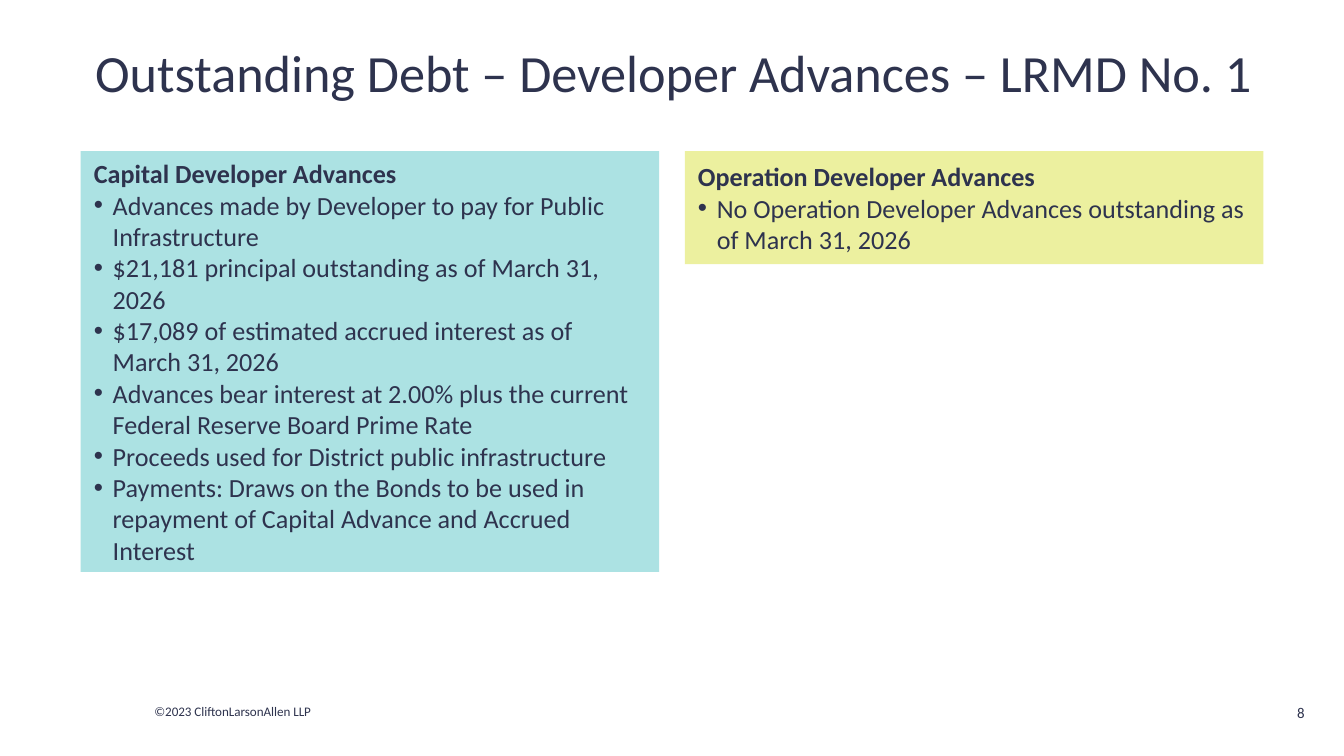
from dataclasses import dataclass
from lxml.etree import SubElement
from pptx import Presentation
from pptx.dml.color import RGBColor
from pptx.enum.shapes import MSO_SHAPE
from pptx.enum.text import MSO_ANCHOR, PP_ALIGN
from pptx.oxml.ns import qn
from pptx.util import Emu, Pt

PX = 4572  # EMU per px, 200 px to the inch


@dataclass(frozen=True)
class Theme:
    font: str = "Calibri"
    ink: str = "2E334E"
    teal: str = "7DD2D3"
    lime: str = "E2E868"
    panel_alpha: int = 63
    title_size: int = 28
    body_size: int = 14
    number_size: int = 8
    footer_size: int = 7


THEME = Theme()


def px(length):
    return Emu(length * PX)


def style(para, size, bold=False, align=PP_ALIGN.LEFT):
    para.alignment = align
    for span in para.runs:
        span.font.name = THEME.font
        span.font.size = Pt(size)
        span.font.bold = bold
        span.font.color.rgb = RGBColor.from_string(THEME.ink)


def add_bullet(para, indent=28):
    properties = para._p.get_or_add_pPr()
    properties.set("marL", str(px(indent)))
    properties.set("indent", str(px(-indent)))
    SubElement(properties, qn("a:buFont")).set("typeface", "Arial")
    SubElement(properties, qn("a:buChar")).set("char", "•")


def add_label(page, box, text, size, align=PP_ALIGN.LEFT):
    frame = page.shapes.add_textbox(*map(px, box)).text_frame
    frame.word_wrap = True
    frame.vertical_anchor = MSO_ANCHOR.MIDDLE
    frame.text = text
    style(frame.paragraphs[0], size, align=align)


def add_panel(page, box, color, heading, points):
    # Translucent background
    panel = page.shapes.add_shape(MSO_SHAPE.RECTANGLE, *map(px, box))
    panel.shadow.inherit = False
    panel.line.fill.background()
    panel.fill.solid()
    panel.fill.fore_color.rgb = RGBColor.from_string(color)
    tint = panel.fill._xPr.find(qn("a:solidFill"))[0]
    SubElement(tint, qn("a:alpha")).set("val", str(THEME.panel_alpha * 1000))

    # Heading and bulleted points
    frame = panel.text_frame
    frame.word_wrap = True
    frame.vertical_anchor = MSO_ANCHOR.MIDDLE
    frame.text = heading
    style(frame.paragraphs[0], THEME.body_size, bold=True)
    for point in points:
        para = frame.add_paragraph()
        para.text = point
        add_bullet(para)
        style(para, THEME.body_size)


def add_panels(page, box, gap, panels):
    left, top, width, _ = box
    panel_width = (width - gap * (len(panels) - 1)) // len(panels)
    for column, (height, color, heading, points) in enumerate(panels):
        panel_left = left + column * (panel_width + gap)
        add_panel(page, (panel_left, top, panel_width, height),
                  color, heading, points)


def add_footer(page, box, copyright_line, number):
    left, top, width, height = box
    add_label(page, (left, top + 15, 302, 44), copyright_line,
              THEME.footer_size)
    add_label(page, (left + width - 87, top, 87, height), number,
              THEME.number_size, PP_ALIGN.RIGHT)


PANELS = [
    (626, THEME.teal, "Capital Developer Advances", [
        "Advances made by Developer to pay for Public Infrastructure",
        "$21,181 principal outstanding as of March 31, 2026",
        "$17,089 of estimated accrued interest as of March 31, 2026",
        "Advances bear interest at 2.00% plus the current Federal Reserve "
        "Board Prime Rate",
        "Proceeds used for District public infrastructure",
        "Payments: Draws on the Bonds to be used in repayment of Capital "
        "Advance and Accrued Interest",
    ]),
    (168, THEME.lime, "Operation Developer Advances", [
        "No Operation Developer Advances outstanding as of March 31, 2026",
    ]),
]


def main():
    deck = Presentation()
    deck.slide_width, deck.slide_height = px(2000), px(1125)
    page = deck.slides.add_slide(deck.slide_layouts[6])
    add_label(page, (42, 32, 1920, 150),
              "Outstanding Debt – Developer Advances – LRMD No. 1",
              THEME.title_size, PP_ALIGN.CENTER)
    add_panels(page, (120, 225, 1760, 626), 38, PANELS)
    add_footer(page, (210, 1022, 1751, 76), "©2023 CliftonLarsonAllen LLP", "8")
    deck.save("out.pptx")


if __name__ == "__main__":
    main()
